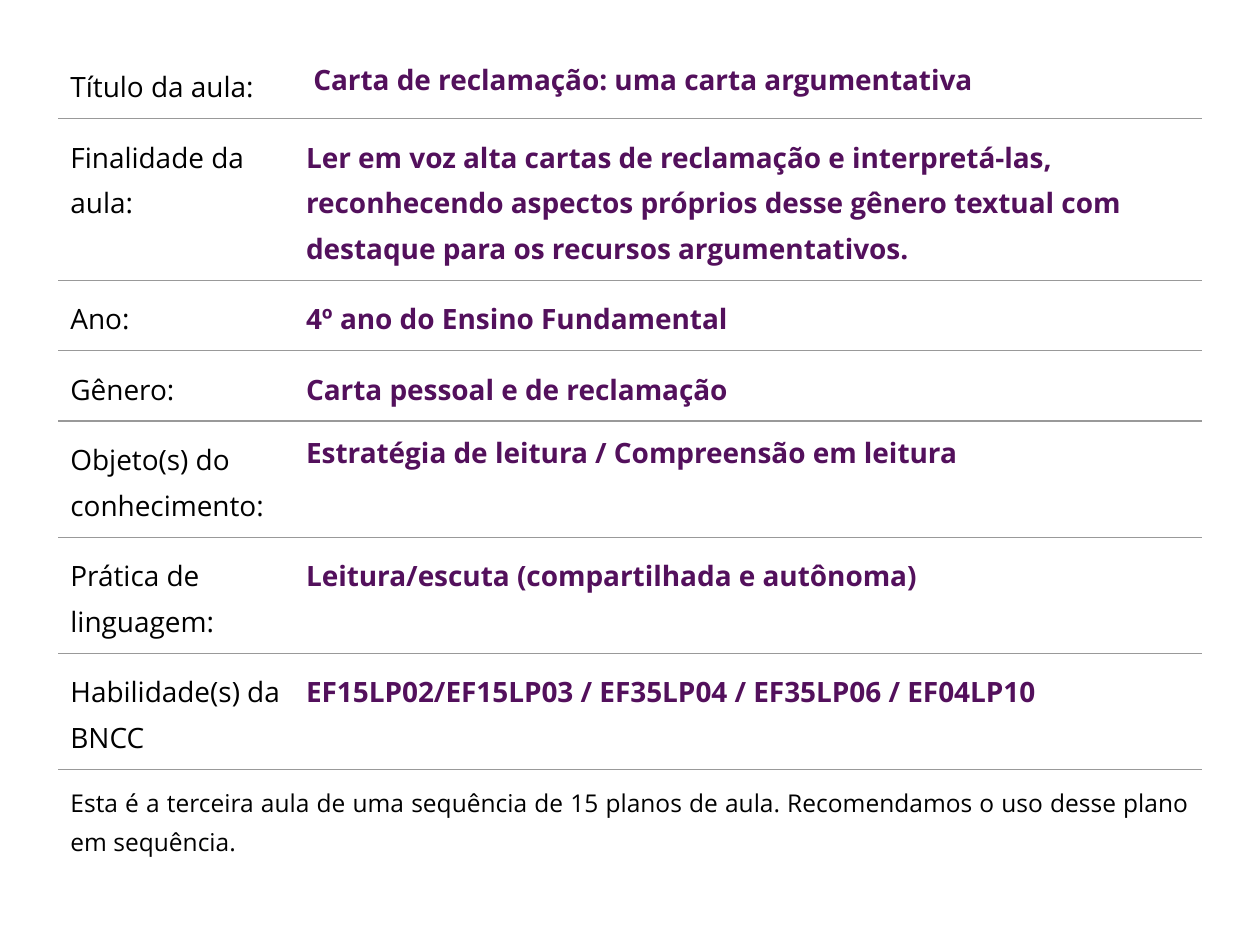
from pptx import Presentation
from pptx import util as u
from pptx.dml import color
from pptx.enum import text
from pptx.oxml import parse_xml
from pptx.oxml import ns

COLORS = {"label": "000000", "value": "53105C", "rule": "999999", "end": "FFFFFF"}
FONT = "Open Sans"
NO_STYLE = "{2D5ABB26-0587-4C30-8999-92F81FD0307C}"
COL_WIDTHS = (4.75, 6.22, 5.56, 6.53)
ROW_HEIGHT = 1.07

# Label, value, and whether the value has the looser line spacing
ROWS = [
    ("Título da aula:", " Carta de reclamação: uma carta argumentativa", False),
    ("Finalidade da aula:",
     "Ler em voz alta cartas de reclamação e interpretá-las, reconhecendo "
     "aspectos próprios desse gênero textual com destaque para os recursos "
     "argumentativos.", True),
    ("Ano:", "4º ano do Ensino Fundamental", True),
    ("Gênero:", "Carta pessoal e de reclamação", True),
    ("Objeto(s) do conhecimento:",
     "Estratégia de leitura / Compreensão em leitura", False),
    ("Prática de linguagem:", "Leitura/escuta (compartilhada e autônoma)", True),
    ("Habilidade(s) da BNCC",
     "EF15LP02/EF15LP03 / EF35LP04 / EF35LP06 / EF04LP10", True),
]
NOTE = ("Esta é a terceira aula de uma sequência de 15 planos de aula. "
        "Recomendamos o uso desse plano em sequência.")


def fill_cell(cell, words, col, size=16, bold=False, spacing=1.0, gap=0,
              align=text.PP_ALIGN.LEFT):
    p = cell.text_frame.paragraphs[0]
    p.alignment = align
    p.line_spacing = spacing
    p.space_before = p.space_after = u.Pt(gap)
    r = p.add_run()
    r.text = words
    r.font.name = FONT
    r.font.size = u.Pt(size)
    r.font.bold = bold
    r.font.color.rgb = color.RGBColor.from_string(COLORS[col])


def format_cell(cell, rule):
    """Clear the fill, set equal margins and draw the rule below."""
    cell.margin_left = cell.margin_right = u.Cm(0.25)
    cell.margin_top = cell.margin_bottom = u.Cm(0.25)
    cell.vertical_anchor = text.MSO_ANCHOR.TOP
    cell.fill.background()
    line = parse_xml(
        f'<a:lnB {ns.nsdecls("a")} w="{u.Pt(0.75)}"><a:solidFill>'
        f'<a:srgbClr val="{COLORS[rule]}"/></a:solidFill></a:lnB>')
    cell._tc.get_or_add_tcPr().insert(0, line)


def add_plain_table(s, n_rows):
    frame = s.shapes.add_table(n_rows, len(COL_WIDTHS), u.Cm(1.17), u.Cm(0.97),
                               u.Cm(sum(COL_WIDTHS)), u.Cm(ROW_HEIGHT * n_rows))
    table = frame.table
    table.first_row = table.horz_banding = False
    table._tbl.tblPr.find(ns.qn("a:tableStyleId")).text = NO_STYLE
    for column, width in zip(table.columns, COL_WIDTHS):
        column.width = u.Cm(width)
    for i, row in enumerate(table.rows):
        row.height = u.Cm(ROW_HEIGHT)
        for cell in row.cells:
            format_cell(cell, "end" if i == n_rows - 1 else "rule")
    return table


def main():
    prs = Presentation()
    prs.slide_width, prs.slide_height = u.Cm(25.4), u.Cm(19.05)
    s = prs.slides.add_slide(prs.slide_layouts[6])
    table = add_plain_table(s, len(ROWS) + 1)
    last_col, last_row = len(COL_WIDTHS) - 1, len(ROWS)

    # Lesson details
    loose = {"spacing": 1.2, "gap": 3}
    for i, (label, value, is_loose) in enumerate(ROWS):
        table.cell(i, 1).merge(table.cell(i, last_col))
        fill_cell(table.cell(i, 0), label, "label", **loose)
        fill_cell(table.cell(i, 1), value, "value", bold=True,
                  **(loose if is_loose else {}))

    # Closing note across the whole table
    note = table.cell(last_row, 0)
    note.merge(table.cell(last_row, last_col))
    fill_cell(note, NOTE, "label", size=14, spacing=1.15,
              align=text.PP_ALIGN.JUSTIFY)

    prs.save("out.pptx")


if __name__ == "__main__":
    main()
